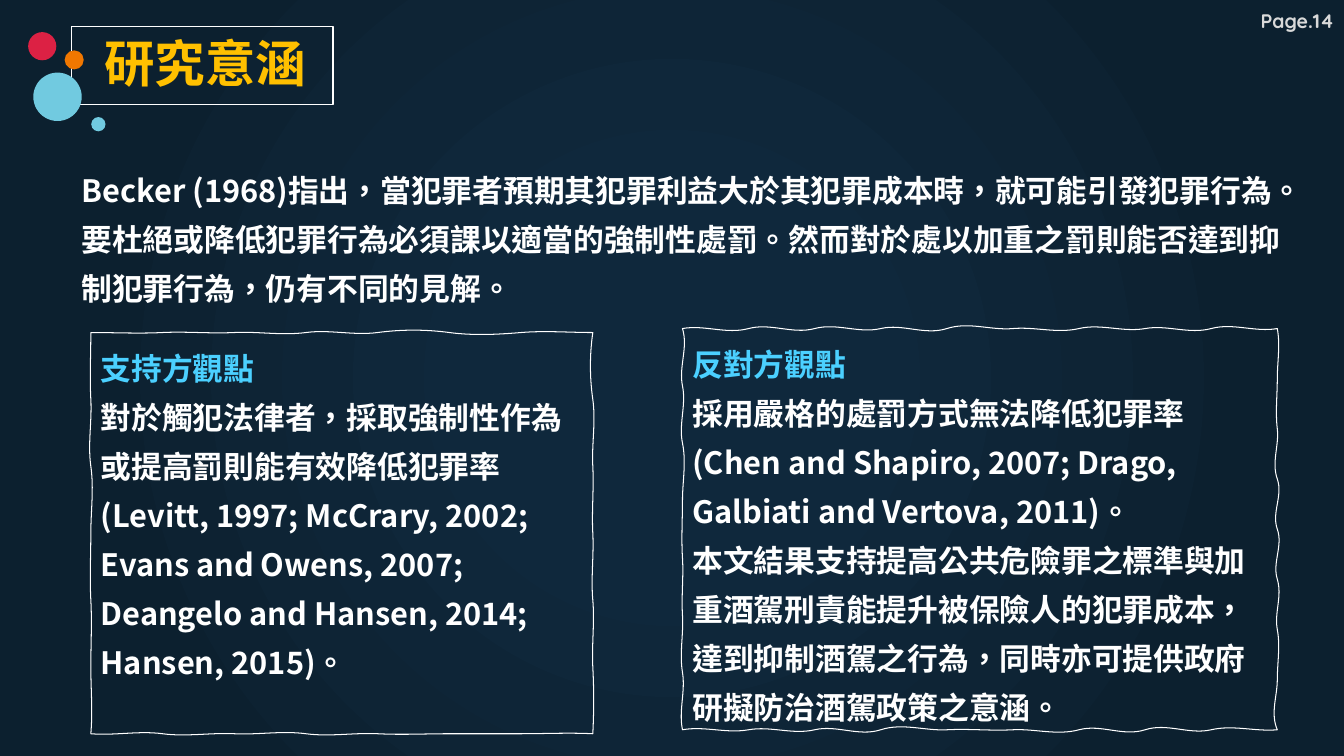
from lxml import etree
from pptx import Presentation
from pptx.dml.color import RGBColor
from pptx.enum import lang, shapes, text
from pptx.oxml import ns
from pptx.util import Cm, Pt

# Content
COLORS = {"white": "FFFFFF", "gold": "FFC000", "sky": "4BD0FF", "grey": "D9D9D9",
          "orange": "F17700", "red": "DC2144", "aqua": "71CAE0"}
BACKDROP = [(0, "0F283C"), (23, "0F283C"), (69, "0D2232"), (97, "0C202F")]
CJK, LATIN = "Noto Sans CJK SC", "Quicksand"

TITLE = [("研究意涵 ", "gold")]
PAGE = [("Page.14", "grey")]
INTRO = [
    ("Becker (1968)指出，當犯罪者預期其犯罪利益大於其犯罪成本時，就可能引發犯罪行為。", "white"),
    ("要杜絕或降低犯罪行為必須課以適當的強制性處罰。然而對於處以加重之罰則能否達到抑制犯罪行為，"
     "仍有不同的見解。", "white"),
]
SUPPORT = [
    ("支持方觀點", "sky"),
    ("對於觸犯法律者，採取強制性作為或提高罰則能有效降低犯罪率(Levitt, 1997; McCrary, 2002; "
     "Evans and Owens, 2007; Deangelo and Hansen, 2014; Hansen, 2015)。", "white"),
]
OPPOSE = [
    ("反對方觀點", "sky"),
    ("採用嚴格的處罰方式無法降低犯罪率(Chen and Shapiro, 2007; Drago, Galbiati and "
     "Vertova, 2011)。", "white"),
    ("本文結果支持提高公共危險罪之標準與加重酒駕刑責能提升被保險人的犯罪成本，達到抑制酒駕之行為，"
     "同時亦可提供政府研擬防治酒駕政策之意涵。", "white"),
]

# Places in cm: left, top, width, height
TITLE_AT = (2.23, 0.67, 6.17, 1.8)
FRAME_AT = (1.81, 0.67, 6.58, 1.96)
PAGE_AT = (31.52, 0.1, 2.3, 0.86)
INTRO_AT = (1.8, 3.89, 30.76, 3.86)
DOTS = [(1.63, 1.27, 0.48, "orange"), (0.71, 0.81, 0.71, "red"),
        (2.3, 2.95, 0.36, "aqua"), (0.84, 1.83, 1.22, "aqua")]
# Sketched boxes: place, wobble at even steps along top, right, bottom, left, and text
BOXES = [
    ((2.29, 8.38, 12.65, 10.11),
     [[0, -.03, -.03, -.08, -.08, .08, -.05, 0],
      [-.08, .08, .03, .03, .05, .03, -.03],
      [-.03, 0, 0, -.03, -.08, -.03, -.08, -.05],
      [.05, 0, -.03, 0, -.08, -.03, 0]], SUPPORT),
    ((17.2, 8.28, 14.99, 10.11),
     [[-.1, -.15, -.15, -.13, -.18, -.05, -.13, -.1, -.15, -.1],
      [.08, 0, .05, .15, .15, .13, .08, 0, .18],
      [.05, .13, .18, .15, .03, .03, .18, .13, .1, .1],
      [-.1, -.08, -.03, -.03, 0, -.1, -.1, -.15]], OPPOSE),
]


def cm(values):
    return [Cm(v) for v in values]


def rgb(name):
    return RGBColor.from_string(COLORS[name])


def write(tf, lines, size, font=CJK, align=text.PP_ALIGN.LEFT, spacing=None):
    tf.word_wrap = True
    tf.auto_size = text.MSO_AUTO_SIZE.NONE
    tf.vertical_anchor = text.MSO_ANCHOR.TOP
    for i, (words, color) in enumerate(lines):
        p = tf.add_paragraph() if i else tf.paragraphs[0]
        p.text = words
        p.alignment = align
        p.space_before = Pt(0)
        if spacing:
            p.line_spacing = Pt(spacing)
        f = p.font
        f.name, f.size, f.bold = font, Pt(size), True
        f.language_id = lang.MSO_LANGUAGE_ID.TRADITIONAL_CHINESE
        f.color.rgb = rgb(color)
        latin = p._p.get_or_add_pPr().find(".//" + ns.qn("a:latin"))
        latin.addnext(etree.Element(ns.qn("a:ea"), typeface=font))


def outline(sp, width):
    sp.shadow.inherit = False
    sp.fill.background()
    sp.line.color.rgb = rgb("white")
    sp.line.width = Pt(width)


def curve_points(place, wobbles):
    """Walk the edges clockwise: two control points and an end point per step."""
    left, top, width, height = place
    corners = [(left, top), (left + width, top),
               (left + width, top + height), (left, top + height)]
    points = [corners[0]]
    for side, bends in enumerate(wobbles):
        (x0, y0), (x1, y1) = corners[side], corners[(side + 1) % 4]
        steps = len(bends) - 1
        for k in range(steps):
            for t, off in ((1 / 3, bends[k]), (2 / 3, -bends[k + 1]), (1, 0)):
                along = (k + t) / steps
                dx, dy = (0, off) if side % 2 == 0 else (off, 0)
                points.append((x0 + (x1 - x0) * along + dx, y0 + (y1 - y0) * along + dy))
    return [tuple(cm(point)) for point in points]


def bend(box, place):
    """Join each three line segments into one curve and fit the frame to the place."""
    left, top, width, height = cm(place)
    outline_path = box._element.find(".//" + ns.qn("a:path"))
    lines = outline_path.findall(ns.qn("a:lnTo"))
    for first, second, third in zip(lines[::3], lines[1::3], lines[2::3]):
        curve = etree.Element(ns.qn("a:cubicBezTo"))
        first.addprevious(curve)
        for line in (first, second, third):
            curve.append(line[0])
            outline_path.remove(line)
    shift_x, shift_y = left - box.left, top - box.top
    for pt in outline_path.iter(ns.qn("a:pt")):
        pt.set("x", str(int(pt.get("x")) - shift_x))
        pt.set("y", str(int(pt.get("y")) - shift_y))
    outline_path.set("w", str(width))
    outline_path.set("h", str(height))
    box.left, box.top, box.width, box.height = left, top, width, height


prs = Presentation()
prs.slide_width, prs.slide_height = Cm(33.87), Cm(19.05)
s = prs.slides.add_slide(prs.slide_layouts[1])

# Radial background
s.background.fill.gradient()
grad = s.element.find(".//" + ns.qn("a:gradFill"))
for child in list(grad):
    grad.remove(child)
stops = etree.SubElement(grad, ns.qn("a:gsLst"))
for pos, color in BACKDROP:
    gs = etree.SubElement(stops, ns.qn("a:gs"), pos=str(pos * 1000))
    etree.SubElement(gs, ns.qn("a:srgbClr"), val=color)
circle = etree.SubElement(grad, ns.qn("a:path"), path="circle")
etree.SubElement(circle, ns.qn("a:fillToRect"), l="50000", t="50000", r="50000", b="50000")

# Title and introduction
title, intro = s.shapes.title, s.placeholders[1]
for holder, place in ((title, TITLE_AT), (intro, INTRO_AT)):
    holder.left, holder.top, holder.width, holder.height = cm(place)
write(title.text_frame, TITLE, 36, align=text.PP_ALIGN.CENTER)
write(intro.text_frame, INTRO, 22, spacing=35)
for p in intro.text_frame.paragraphs:
    pPr = p._p.get_or_add_pPr()
    pPr.set("marL", "0")
    pPr.set("indent", "0")
    pPr.find(ns.qn("a:defRPr")).addprevious(etree.Element(ns.qn("a:buNone")))

# Page number
page = s.shapes.add_textbox(*cm(PAGE_AT))
write(page.text_frame, PAGE, 14, font=LATIN)
page.text_frame.margin_right = 0

# Title frame and dots
outline(s.shapes.add_shape(shapes.MSO_SHAPE.RECTANGLE, *cm(FRAME_AT)), 1)
for left, top, size, color in DOTS:
    dot = s.shapes.add_shape(shapes.MSO_SHAPE.OVAL, *cm((left, top, size, size)))
    dot.shadow.inherit = False
    dot.fill.solid()
    dot.fill.fore_color.rgb = rgb(color)
    dot.line.fill.background()

# Sketched viewpoint boxes
for place, wobbles, lines in BOXES:
    start, *rest = curve_points(place, wobbles)
    builder = s.shapes.build_freeform(*start)
    builder.add_line_segments(rest, close=True)
    box = builder.convert_to_shape()
    bend(box, place)
    outline(box, 0.75)
    write(box.text_frame, lines, 22, spacing=35)

prs.save("out.pptx")
